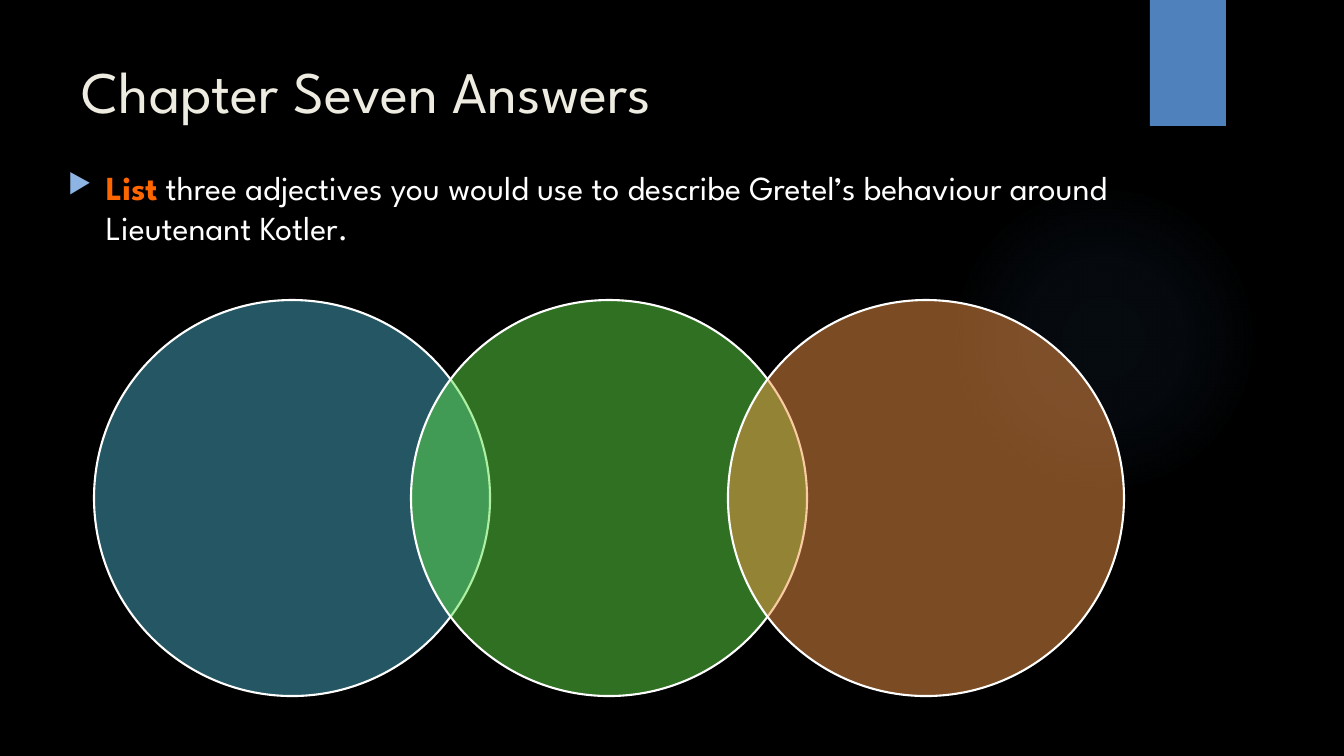
from lxml import etree
from pptx import Presentation
from pptx import util as u
from pptx.dml.color import RGBColor
from pptx.enum import shapes, text
from pptx.oxml import ns, parse_xml

BLACK = RGBColor(0x00, 0x00, 0x00)
WHITE = RGBColor(0xFF, 0xFF, 0xFF)
CREAM = RGBColor(0xEE, 0xEC, 0xE1)
ORANGE = RGBColor(0xFF, 0x66, 0x00)
BLUE = RGBColor(0x4F, 0x81, 0xBD)
GLOW = RGBColor(0x55, 0x8E, 0xD5)
SKY = RGBColor(0x8E, 0xB4, 0xE3)
TEAL = RGBColor(0x4B, 0xAC, 0xC6)
GREEN = RGBColor(0x60, 0xE1, 0x46)
AMBER = RGBColor(0xF7, 0x96, 0x46)

OVAL = shapes.MSO_SHAPE.OVAL
RECT = shapes.MSO_SHAPE.RECTANGLE


class Deck:
    font = "League Spartan"
    scale = 12192000 / 1344

    def __init__(self):
        self.prs = Presentation()
        self.prs.slide_width = self.px(1344)
        self.prs.slide_height = self.px(756)
        self.slide = self.prs.slides.add_slide(self.prs.slide_layouts[6])
        back = self.slide.background.fill
        back.solid()
        back.fore_color.rgb = BLACK

    def px(self, size):
        return u.Emu(round(size * self.scale))

    def shape(self, kind, *box):
        item = self.slide.shapes.add_shape(kind, *map(self.px, box))
        item.shadow.inherit = False
        item.line.fill.background()
        return item

    def solid(self, kind, box, color, alpha=100):
        item = self.shape(kind, *box)
        item.fill.solid()
        item.fill.fore_color.rgb = color
        if alpha < 100:
            tone = item.fill._xPr.find(".//" + ns.qn("a:srgbClr"))
            etree.SubElement(tone, ns.qn("a:alpha"), val=str(alpha * 1000))
        return item

    def disc(self, box, color):
        item = self.solid(OVAL, box, color, 50)
        item.line.color.rgb = WHITE
        item.line.width = u.Pt(1.5)

    def glow(self, box, color, stops):
        item = self.shape(OVAL, *box)
        item.fill.background()
        marks = "".join(
            f'<a:gs pos="{pos * 1000}"><a:srgbClr val="{color}">'
            f'<a:alpha val="{alpha * 1000}"/></a:srgbClr></a:gs>'
            for pos, alpha in stops)
        grad = parse_xml(
            f'<a:gradFill {ns.nsdecls("a")}><a:gsLst>{marks}</a:gsLst>'
            '<a:path path="circle"><a:fillToRect l="50000" t="50000" '
            'r="50000" b="50000"/></a:path></a:gradFill>')
        props = item.fill._xPr
        props.replace(props.find(ns.qn("a:noFill")), grad)

    def words(self, box, size, runs, bullet=None):
        item = self.slide.shapes.add_textbox(*map(self.px, box))
        frame = item.text_frame
        frame.word_wrap = True
        frame.vertical_anchor = text.MSO_ANCHOR.TOP
        para = frame.paragraphs[0]
        if bullet:
            self.bullet(para, bullet)
        for words, color, bold in runs:
            run = para.add_run()
            run.text = words
            run.font.name = self.font
            run.font.size = u.Pt(size)
            run.font.bold = bold
            run.font.color.rgb = color

    def bullet(self, para, color):
        props = para._p.get_or_add_pPr()
        props.set("marL", str(self.px(38)))
        props.set("indent", str(-self.px(38)))
        tint = etree.SubElement(props, ns.qn("a:buClr"))
        etree.SubElement(tint, ns.qn("a:srgbClr"), val=str(color))
        etree.SubElement(props, ns.qn("a:buSzPct"), val="80000")
        etree.SubElement(props, ns.qn("a:buChar"), char="▶")


def main():
    deck = Deck()
    deck.glow((949, 184, 310, 310), GLOW, [(0, 7), (36, 6), (69, 0)])
    deck.solid(RECT, (1150, 0, 76, 126), BLUE)
    deck.words((72, 50, 1037, 154), 42,
               [("Chapter Seven Answers", CREAM, False)])
    deck.words((58, 162, 1098, 463), 24, [
        ("List", ORANGE, True),
        (" three adjectives you would use to describe Gretel’s behaviour "
         "around Lieutenant Kotler.", WHITE, False),
    ], SKY)
    for col, color in enumerate((TEAL, GREEN, AMBER)):
        deck.disc((94 + col * 317, 300, 396, 396), color)
    deck.prs.save("out.pptx")


if __name__ == "__main__":
    main()
